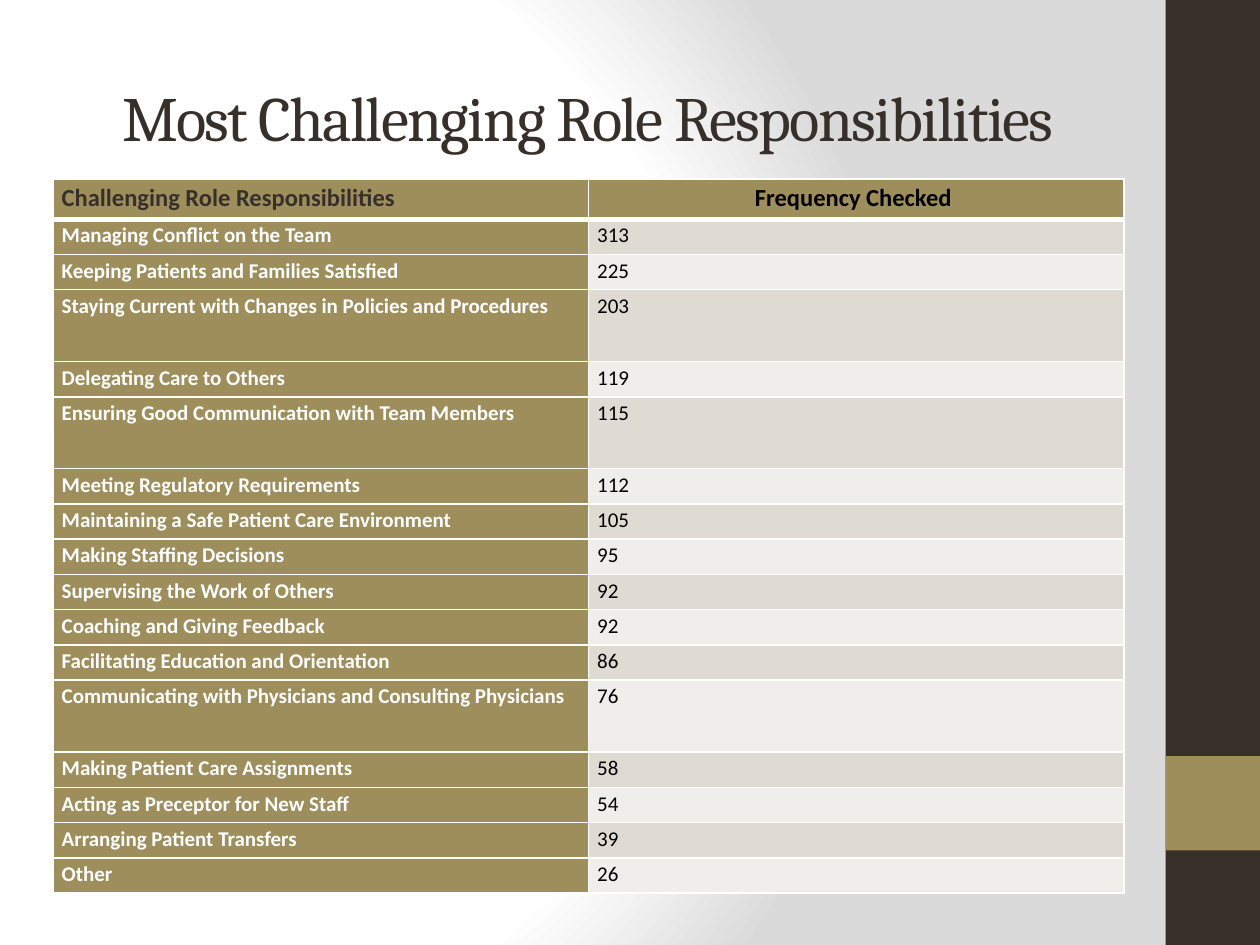
from lxml import etree
from pptx import Presentation
from pptx import util as u
from pptx.dml.color import RGBColor
from pptx.enum import shapes, text
from pptx.oxml import parse_xml
from pptx.oxml.ns import nsdecls, qn

DARK, GOLD, WHITE, BLACK = "37302A", "9E8E5C", "FFFFFF", "000000"
BANDS = ("DFDBD2", "F0EEEA")
HEADER_HEIGHT, ROW_HEIGHT, TALL_ROW_HEIGHT = 0.32, 0.28, 0.57

HEADINGS = ("Challenging Role Responsibilities", "Frequency Checked ")
RESPONSIBILITIES = [
    ("Managing Conflict on the Team", 313),
    ("Keeping Patients and Families Satisfied", 225),
    ("Staying Current with Changes in Policies and Procedures", 203),
    ("Delegating Care to Others", 119),
    ("Ensuring Good Communication with Team Members", 115),
    ("Meeting Regulatory Requirements", 112),
    ("Maintaining a Safe Patient Care Environment", 105),
    ("Making Staffing Decisions", 95),
    ("Supervising the Work of Others", 92),
    ("Coaching and Giving Feedback", 92),
    ("Facilitating Education and Orientation", 86),
    ("Communicating with Physicians and Consulting Physicians", 76),
    ("Making Patient Care Assignments", 58),
    ("Acting as Preceptor for New Staff", 54),
    ("Arranging Patient Transfers", 39),
    ("Other", 26),
]
TALL_ROWS = (3, 5, 12)


def color(hex_value):
    return RGBColor.from_string(hex_value)


def set_background(slide):
    """Radial gradient from white to light grey."""
    slide.background.fill.solid()
    properties = slide.element.find(".//" + qn("p:bgPr"))
    stops = "".join(
        f'<a:gs pos="{pos * 1000}"><a:srgbClr val="{shade}"/></a:gs>'
        for pos, shade in ((0, WHITE), (75, WHITE), (100, "DADADA"))
    )
    gradient = parse_xml(
        f'<a:gradFill {nsdecls("a")} rotWithShape="1"><a:gsLst>{stops}</a:gsLst>'
        '<a:path path="circle"><a:fillToRect l="20000" t="50000" r="100000" b="50000"/>'
        "</a:path></a:gradFill>"
    )
    properties.replace(properties[0], gradient)


def add_block(slide, left, top, width, height, fill):
    block = slide.shapes.add_shape(
        shapes.MSO_SHAPE.RECTANGLE, *map(u.Inches, (left, top, width, height)))
    block.shadow.inherit = False
    block.fill.solid()
    block.fill.fore_color.rgb = color(fill)
    block.line.fill.background()


def write(paragraph, words, font_color, **font_values):
    run = paragraph.add_run()
    run.text = words
    run.font.color.rgb = color(font_color)
    for name, value in font_values.items():
        setattr(run.font, name, value)
    return run


def add_title(slide, words):
    frame = slide.shapes.add_textbox(
        *map(u.Inches, (0.5, 0.3, 8.33, 1.25))).text_frame
    frame.word_wrap = True
    frame.vertical_anchor = text.MSO_ANCHOR.MIDDLE
    heading = frame.paragraphs[0]
    heading.alignment = text.PP_ALIGN.CENTER
    run = write(heading, words, DARK, name="Cambria", size=u.Pt(36))
    run.font._element.set("spc", "-100")


def set_borders(cell, **widths):
    properties = cell._tc.get_or_add_tcPr()
    for side in "LRTB":
        line = etree.SubElement(
            properties, qn(f"a:ln{side}"), w=str(u.Pt(widths.get(side, 1))))
        fill = etree.SubElement(line, qn("a:solidFill"))
        etree.SubElement(fill, qn("a:srgbClr"), val=WHITE)


def fill_cell(cell, words, fill, font_color, size, bold, centered=False, **borders):
    margins = {"margin_left": 0.07, "margin_right": 0.07,
               "margin_top": 0, "margin_bottom": 0}
    for name, value in margins.items():
        setattr(cell, name, u.Inches(value))
    set_borders(cell, **borders)
    cell.fill.solid()
    cell.fill.fore_color.rgb = color(fill)
    paragraph = cell.text_frame.paragraphs[0]
    paragraph.line_spacing = 1.15
    paragraph.alignment = text.PP_ALIGN.CENTER if centered else text.PP_ALIGN.LEFT
    write(paragraph, words, font_color, name="Calibri", size=u.Pt(size), bold=bold)


def add_frequency_table(slide):
    heights = [HEADER_HEIGHT] + [
        TALL_ROW_HEIGHT if row in TALL_ROWS else ROW_HEIGHT
        for row in range(1, len(RESPONSIBILITIES) + 1)
    ]
    table = slide.shapes.add_table(
        len(heights), 2, *map(u.Inches, (0.42, 1.42, 8.5, sum(heights)))).table
    for row, height in zip(table.rows, heights):
        row.height = u.Inches(height)

    # Header row, with a thick rule below it
    for column, (heading, shade) in enumerate(zip(HEADINGS, (DARK, BLACK))):
        fill_cell(table.cell(0, column), heading, GOLD, shade, 14, True,
                  centered=column == 1, B=3)

    # Responsibilities and their counts
    for row, (duty, count) in enumerate(RESPONSIBILITIES, 1):
        top = 3 if row == 1 else 1
        fill_cell(table.cell(row, 0), duty, GOLD, WHITE, 12, True, T=top)
        fill_cell(table.cell(row, 1), str(count), BANDS[(row - 1) % 2],
                  BLACK, 12, False, T=top)


def main():
    deck = Presentation()
    deck.slide_width, deck.slide_height = u.Inches(10), u.Inches(7.5)
    slide = deck.slides.add_slide(deck.slide_layouts[6])
    set_background(slide)

    # Side band with its accent
    add_block(slide, 9.25, 0, 0.75, 7.5, DARK)
    add_block(slide, 9.25, 6, 0.75, 0.75, GOLD)

    add_title(slide, "Most Challenging Role Responsibilities")
    add_frequency_table(slide)
    deck.save("out.pptx")


if __name__ == "__main__":
    main()
